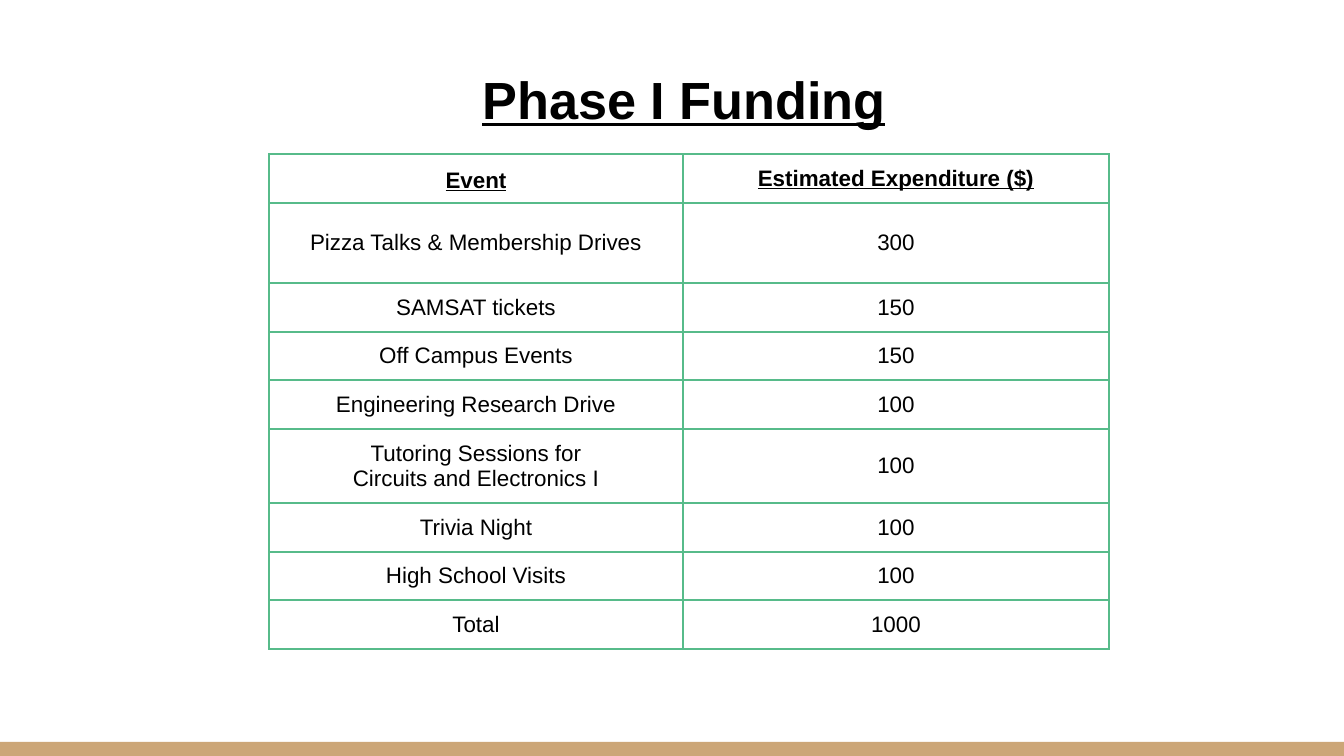
from itertools import pairwise

from lxml.etree import SubElement
from pptx import Presentation
from pptx.dml.color import RGBColor
from pptx.enum.shapes import MSO_SHAPE as Shape
from pptx.enum.text import MSO_ANCHOR as Anchor, PP_ALIGN as Align
from pptx.oxml.ns import qn
from pptx.util import Emu, Pt

EMU_PER_PX = 914400 / 134.4
PAGE_SIZE = 1344, 756

COLUMN_EDGES = [269, 683, 1109]
ROW_EDGES = [154, 203, 283, 332, 380, 429, 503, 552, 600, 649]
FUNDING = [
    ("Event", "Estimated Expenditure ($)"),
    ("Pizza Talks & Membership Drives", "300"),
    ("SAMSAT tickets", "150"),
    ("Off Campus Events", "150"),
    ("Engineering Research Drive", "100"),
    ("Tutoring Sessions for\nCircuits and Electronics I", "100"),
    ("Trivia Night", "100"),
    ("High School Visits", "100"),
    ("Total", "1000"),
]


def px(length):
    return Emu(round(length * EMU_PER_PX))


def color(code):
    return RGBColor.from_string(code)


class Page:
    font_name = "Arial"
    ink = "000000"
    band = "CCA677"
    grid = "57BB8A"

    def __init__(self, deck):
        self.slide = deck.slides.add_slide(deck.slide_layouts[6])
        self.shapes = self.slide.shapes
        fill = self.slide.background.fill
        fill.solid()
        fill.fore_color.rgb = color("FFFFFF")

    def set_text(self, frame, text, size, heading=False):
        """Fill a text frame with centred text, one paragraph per line."""
        frame.word_wrap = True
        frame.text = text
        for para in frame.paragraphs:
            para.alignment = Align.CENTER
            font = para.font
            font.name = self.font_name
            font.size = Pt(size)
            font.bold = font.underline = heading
            font.color.rgb = color(self.ink)

    def bar(self, left, top, width, height):
        box = self.shapes.add_shape(Shape.RECTANGLE, px(left), px(top), px(width), px(height))
        box.shadow.inherit = False
        box.fill.solid()
        box.fill.fore_color.rgb = color(self.band)
        box.line.fill.background()

    def title(self, text, left, top, width, height):
        frame = self.shapes.add_textbox(px(left), px(top), px(width), px(height)).text_frame
        frame.margin_left = frame.margin_right = px(13)
        frame.margin_top = frame.margin_bottom = px(13)
        self.set_text(frame, text, 28, heading=True)

    def border(self, cell):
        """Draw a 1 pt line on all four sides of a cell."""
        properties = cell._tc.get_or_add_tcPr()
        for side in ("a:lnL", "a:lnR", "a:lnT", "a:lnB"):
            line = SubElement(properties, qn(side), w=str(Pt(1)))
            fill = SubElement(line, qn("a:solidFill"))
            SubElement(fill, qn("a:srgbClr"), val=self.grid)

    def table(self, rows, column_edges, row_edges):
        """Add a table whose first row is a heading, with its grid lines at the given edges."""
        left, top = column_edges[0], row_edges[0]
        table = self.shapes.add_table(
            len(rows), len(rows[0]), px(left), px(top),
            px(column_edges[-1] - left), px(row_edges[-1] - top),
        ).table
        table.first_row = table.horz_banding = False
        for column, (start, end) in zip(table.columns, pairwise(column_edges)):
            column.width = px(end - start)
        for row, (start, end) in zip(table.rows, pairwise(row_edges)):
            row.height = px(end - start)
        for index, (row, texts) in enumerate(zip(table.rows, rows)):
            for cell, text in zip(row.cells, texts):
                self.border(cell)
                cell.fill.background()
                cell.vertical_anchor = Anchor.MIDDLE
                cell.margin_left = cell.margin_right = px(9)
                cell.margin_top = cell.margin_bottom = px(9)
                self.set_text(cell.text_frame, text, 12, heading=index == 0)
        table.cell(0, 0).text_frame.paragraphs[0].line_spacing = 1.15


def main():
    deck = Presentation()
    deck.slide_width, deck.slide_height = map(px, PAGE_SIZE)
    page = Page(deck)
    page.bar(0, 742, 1344, 14)
    page.title("Phase I Funding", 280, 54, 808, 85)
    page.table(FUNDING, COLUMN_EDGES, ROW_EDGES)
    deck.save("out.pptx")


if __name__ == "__main__":
    main()
